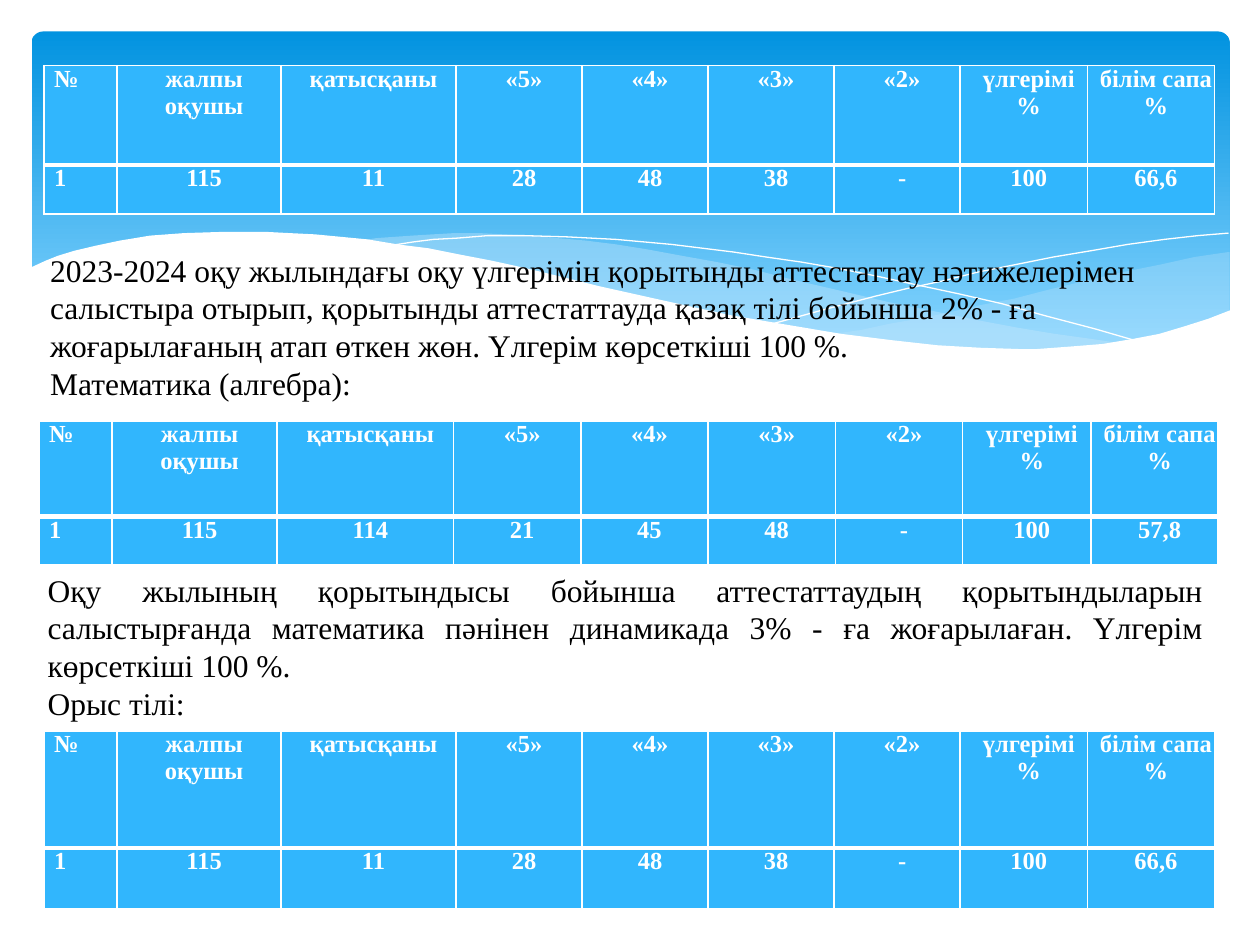
from lxml.etree import SubElement
from pptx import Presentation
from pptx.dml.color import RGBColor
from pptx.enum.shapes import MSO_SHAPE as Preset
from pptx.enum.text import MSO_AUTO_SIZE as AutoSize, PP_ALIGN as Align
from pptx.oxml.ns import qn
from pptx.util import Inches, Pt

WHITE = RGBColor(0xFF, 0xFF, 0xFF)
BLACK = RGBColor(0, 0, 0)
CELL_BLUE = RGBColor(0x31, 0xB6, 0xFD)
DEEP_BLUE = RGBColor(0x02, 0x93, 0xE0)
SKY_BLUE = RGBColor(0x83, 0xD3, 0xFE)
PALE_BLUE = RGBColor(0xC6, 0xE7, 0xFC)
FONT = "Times New Roman"


def add_wave(page, points, fill=None, opacity=100):
    """Draw a filled wave, or a thin white curve when there is no fill."""
    corners = [(Inches(x), Inches(y)) for x, y in points]
    builder = page.shapes.build_freeform(*corners[0])
    builder.add_line_segments(corners[1:], close=fill is not None)
    wave = builder.convert_to_shape()
    wave.shadow.inherit = False
    if fill is None:
        wave.fill.background()
        wave.line.color.rgb = WHITE
        wave.line.width = Pt(0)
        return
    wave.line.fill.background()
    wave.fill.solid()
    wave.fill.fore_color.rgb = fill
    if opacity < 100:
        color = wave.fill._xPr.find(qn("a:solidFill"))[0]
        SubElement(color, qn("a:alpha")).set("val", str(opacity * 1000))


def format_para(para, size, color, align, bold=False):
    para.alignment = align
    for span in para.runs:
        span.font.name = FONT
        span.font.size = Pt(size)
        span.font.bold = bold
        span.font.color.rgb = color


deck = Presentation()
deck.slide_width, deck.slide_height = Inches(10), Inches(7.5)
page = deck.slides.add_slide(deck.slide_layouts[6])

# Blue gradient panel
panel = page.shapes.add_shape(Preset.ROUNDED_RECTANGLE, Inches(0.25), Inches(0.25),
                              Inches(9.51), Inches(2.7))
panel.adjustments[0] = 0.034
panel.shadow.inherit = False
panel.line.fill.background()
panel.fill.gradient()
panel.fill.gradient_angle = 270
for stop, color, position in zip(panel.fill.gradient_stops, (DEEP_BLUE, SKY_BLUE), (0, 0.9)):
    stop.color.rgb = color
    stop.position = position

# Translucent waves, thin curves and the white lower edge
add_wave(page, [
    (9.75, 2), (9.48, 2.04), (9.21, 2.1), (8.91, 2.16), (8.61, 2.23), (8.32, 2.3),
    (8.05, 2.37), (7.79, 2.42), (7.53, 2.48), (7.29, 2.53), (7.06, 2.57), (6.83, 2.62),
    (6.61, 2.65), (6.91, 2.69), (7.19, 2.72), (7.45, 2.75), (7.69, 2.77), (8.03, 2.78),
    (8.35, 2.77), (8.63, 2.75), (8.89, 2.72), (9.13, 2.67), (9.35, 2.62), (9.49, 2.57),
    (9.63, 2.52), (9.76, 2.47), (9.76, 2)], PALE_BLUE, 29)
add_wave(page, [
    (8.93, 2.73), (8.66, 2.69), (8.37, 2.65), (8.07, 2.6), (7.75, 2.54), (7.41, 2.47),
    (7.06, 2.4), (6.68, 2.31), (6.29, 2.22), (5.98, 2.14), (5.69, 2.08), (5.41, 2.03),
    (5.14, 1.98), (4.89, 1.94), (4.65, 1.91), (4.42, 1.89), (4.2, 1.87), (3.99, 1.86),
    (3.8, 1.85), (3.61, 1.85), (3.28, 1.87), (2.99, 1.89), (2.86, 1.91), (3.23, 1.96),
    (3.62, 2.03), (4.04, 2.11), (4.49, 2.22), (4.91, 2.32), (5.3, 2.4), (5.66, 2.48),
    (6.01, 2.55), (6.34, 2.61), (6.65, 2.66), (6.95, 2.7), (7.22, 2.74), (7.48, 2.76),
    (7.73, 2.77), (7.96, 2.78), (8.28, 2.78), (8.57, 2.77), (8.76, 2.75)], PALE_BLUE, 40)
add_wave(page, [
    (3.09, 1.95), (3.28, 1.92), (3.44, 1.9), (3.63, 1.89), (3.87, 1.87), (4.16, 1.87),
    (4.5, 1.88), (4.89, 1.9), (5.33, 1.94), (5.82, 2), (6.08, 2.04), (6.36, 2.08),
    (6.65, 2.13), (6.95, 2.19), (7.27, 2.26), (7.6, 2.33), (7.95, 2.41), (8.31, 2.51),
    (8.69, 2.61), (9.07, 2.72)])
add_wave(page, [
    (6.13, 2.57), (6.53, 2.46), (6.95, 2.35), (7.2, 2.29), (7.48, 2.23), (7.76, 2.16),
    (8.06, 2.1), (8.36, 2.04), (8.66, 1.99), (8.95, 1.94), (9.24, 1.9), (9.51, 1.87),
    (9.75, 1.85)])
add_wave(page, [
    (9.77, 2.46), (9.59, 2.53), (9.4, 2.59), (9.2, 2.65), (8.99, 2.69), (8.75, 2.73),
    (8.5, 2.75), (8.23, 2.77), (8.09, 2.77), (7.78, 2.76), (7.44, 2.74), (7.08, 2.7),
    (6.68, 2.65), (6.26, 2.58), (5.79, 2.5), (5.29, 2.39), (4.75, 2.27), (4.47, 2.2),
    (4.18, 2.13), (3.91, 2.07), (3.65, 2.02), (3.4, 1.97), (3.16, 1.94), (2.92, 1.9),
    (2.71, 1.88), (2.5, 1.86), (2.3, 1.85), (2.11, 1.84), (1.77, 1.84), (1.46, 1.85),
    (1.19, 1.87), (0.95, 1.91), (0.76, 1.95), (0.59, 1.99), (0.46, 2.03), (0.36, 2.07),
    (0.23, 2.13), (0.23, 3.29), (9.77, 3.29)], WHITE)

# Result tables: left, top, column widths, row heights, values
HEADER = ["№", "жалпы оқушы", "қатысқаны", "«5»", "«4»", "«3»", "«2»",
          "үлгерімі %", "білім сапа %"]
KAZAKH = ["1", "115", "11", "28", "48", "38", "-", "100", "66,6"]
MATHS = ["1", "115", "114", "21", "45", "48", "-", "100", "57,8"]
NARROW = [0.58, 1.3, 1.39, 1, 1, 1, 1, 1.01, 1.01]
WIDE = [0.58, 1.31, 1.4, 1.01, 1.01, 1.01, 1.01, 1.02, 1.01]
results = [
    (0.35, 5.8, NARROW, (0.93, 0.48), KAZAKH),
    (0.31, 3.34, WIDE, (0.76, 0.38), MATHS),
    (0.35, 0.52, NARROW, (0.79, 0.39), KAZAKH),
]
for left, top, widths, heights, values in results:
    frame = page.shapes.add_table(2, len(HEADER), Inches(left), Inches(top),
                                  Inches(sum(widths)), Inches(sum(heights)))
    table = frame.table
    for column, width in zip(table.columns, widths):
        column.width = Inches(width)
    for row_index, texts in enumerate((HEADER, values)):
        table.rows[row_index].height = Inches(heights[row_index])
        # The line between the header and the values is thicker
        borders = {"L": 1, "R": 1, "T": 3 if row_index else 1, "B": 1 if row_index else 3}
        for column_index, text in enumerate(texts):
            cell = table.cell(row_index, column_index)
            cell.margin_left = cell.margin_right = 0
            cell.margin_top = cell.margin_bottom = 0
            cell.text_frame.text = text
            para = cell.text_frame.paragraphs[0]
            format_para(para, 14, WHITE, Align.CENTER if column_index else Align.JUSTIFY, True)
            para._p.get_or_add_pPr().set("marL", str(Inches(0.08)))
            properties = cell._tc.get_or_add_tcPr()
            for side, points in borders.items():
                border = SubElement(properties, qn(f"a:ln{side}"), w=str(Pt(points)))
                paint = SubElement(border, qn("a:solidFill"))
                SubElement(paint, qn("a:srgbClr"), val=str(WHITE))
            cell.fill.solid()
            cell.fill.fore_color.rgb = CELL_BLUE

# Comments between the tables
comments = [
    (0.3, 1.94, Align.LEFT,
     "2023-2024 оқу жылындағы оқу үлгерімін қорытынды аттестаттау нәтижелерімен "
     "салыстыра отырып, қорытынды аттестаттауда қазақ тілі бойынша 2% - ға "
     "жоғарылағаның атап өткен жөн. Үлгерім көрсеткіші 100 %.",
     "Математика (алгебра):"),
    (0.28, 4.48, Align.JUSTIFY,
     "Оқу жылының қорытындысы бойынша аттестаттаудың қорытындыларын "
     "салыстырғанда математика пәнінен динамикада 3% - ға жоғарылаған. "
     "Үлгерім көрсеткіші 100 %.",
     "Орыс тілі:"),
]
for left, top, align, comment, next_subject in comments:
    box = page.shapes.add_textbox(Inches(left), Inches(top), Inches(9.37), Inches(1.31))
    box.text_frame.word_wrap = True
    box.text_frame.auto_size = AutoSize.SHAPE_TO_FIT_TEXT
    box.text_frame.text = f"{comment}\n{next_subject}"
    for para in box.text_frame.paragraphs:
        format_para(para, 18, BLACK, align)

deck.save("out.pptx")
